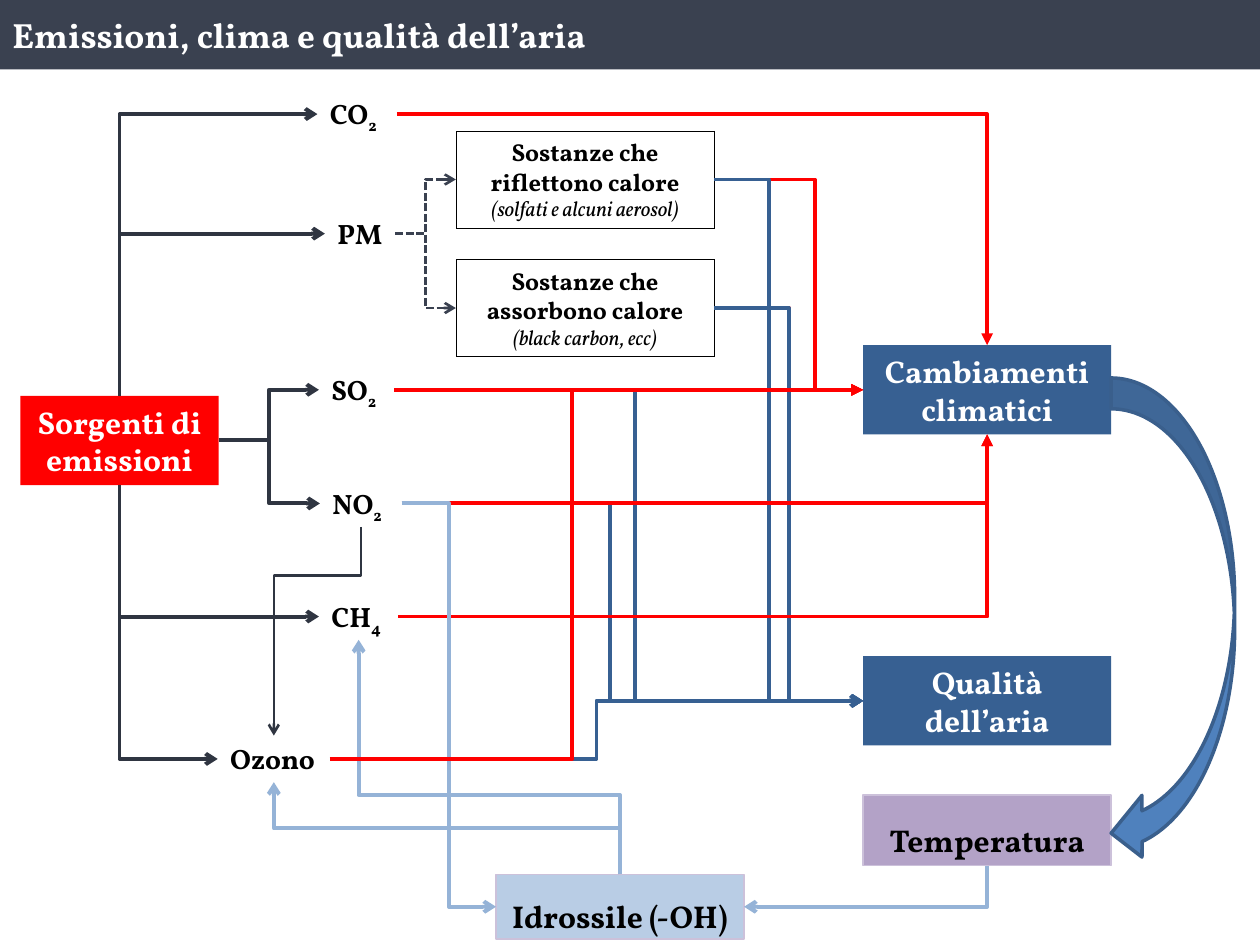
import pptx
import pptx.dml.color
import pptx.enum.dml
import pptx.enum.shapes
import pptx.enum.text
import pptx.oxml
import pptx.oxml.ns
import pptx.util

Cm, Pt = pptx.util.Cm, pptx.util.Pt
RGBColor = pptx.dml.color.RGBColor
SHAPE = pptx.enum.shapes.MSO_SHAPE
LINK = pptx.enum.shapes.MSO_CONNECTOR
DASH = pptx.enum.dml.MSO_LINE
ALIGN = pptx.enum.text.PP_ALIGN
ANCHOR = pptx.enum.text.MSO_ANCHOR
FIT = pptx.enum.text.MSO_AUTO_SIZE

WHITE = RGBColor(0xFF, 0xFF, 0xFF)
BLACK = RGBColor(0x00, 0x00, 0x00)
RED = RGBColor(0xFF, 0x00, 0x00)
BLUE = RGBColor(0x37, 0x60, 0x92)
PALE = RGBColor(0x95, 0xB3, 0xD7)
DARK = RGBColor(0x2F, 0x35, 0x41)
SLATE = RGBColor(0x3A, 0x41, 0x50)
PURPLE = RGBColor(0xB3, 0xA2, 0xC7)
LILAC = RGBColor(0xCC, 0xC1, 0xDA)
SKY = RGBColor(0xB9, 0xCD, 0xE5)
ARROW_FILL = RGBColor(0x4F, 0x81, 0xBD)
ARROW_LINE = RGBColor(0x3A, 0x5F, 0x8C)

FONT = "Vollkorn"
TOP, LEFT, BOTTOM, RIGHT = range(4)

# name: (left, top, width, height in cm), text, fill, line, text colour, line spacing
BOXES = {
    "clima": ((17.4, 6.96, 5, 1.8), "Cambiamenti climatici", BLUE, None, WHITE, None),
    "qualità": ((17.4, 13.23, 5, 1.8), "Qualità dell’aria", BLUE, None, WHITE, None),
    "sorgenti": ((0.41, 7.98, 4, 1.8), "Sorgenti di emissioni", RED, None, WHITE, None),
    "temperatura": ((17.4, 16.03, 5, 1.42), "Temperatura", PURPLE, LILAC, BLACK, 1.5),
    "idrossile": ((10, 17.63, 5, 1.3), "Idrossile (-OH)", SKY, LILAC, BLACK, 1.5),
}
# name: (left, top, width in cm), text, subscript
POLLUTANTS = {
    "co2": ((6.4, 1.83, 1.6), "CO", "2"),
    "pm": ((6.55, 4.24, 1.42), "PM", ""),
    "so2": ((6.43, 7.39, 1.52), "SO", "2"),
    "no2": ((6.45, 9.68, 1.65), "NO", "2"),
    "ch4": ((6.43, 11.96, 1.6), "CH", "4"),
    "ozono": ((4.39, 14.83, 2.26), "Ozono", ""),
}
# name: top in cm, paragraphs of (text, is it the example in italics)
SUBSTANCES = {
    "riflettono": (2.64, [[("Sostanze che riflettono calore", False)],
                          [("(solfati e alcuni aerosol)", True)]]),
    "assorbono": (5.23, [[("Sostanze che assorbono calore ", False),
                          ("(black carbon, ecc)", True)]]),
}

SOURCE = dict(color=DARK, width=2.25, head="arrow")
SPLIT = dict(color=SLATE, width=1.5, head="arrow", dash=DASH.SQUARE_DOT)
CLIMATE = dict(color=RED, width=2.25, head="triangle")
AIR = dict(color=BLUE, width=2.25, head="arrow")
OH = dict(color=PALE, width=2.25, head="arrow")
THIN = dict(color=DARK, width=1.5, head="arrow")

# from, side, to, side, style, place of the middle leg (0 = straight, None = one corner)
FLOWS = [
    ("sorgenti", TOP, "co2", LEFT, SOURCE, None),
    ("sorgenti", TOP, "pm", LEFT, SOURCE, None),
    ("sorgenti", RIGHT, "so2", LEFT, SOURCE, 0.5),
    ("sorgenti", RIGHT, "no2", LEFT, SOURCE, 0.5),
    ("sorgenti", BOTTOM, "ch4", LEFT, SOURCE, None),
    ("sorgenti", BOTTOM, "ozono", LEFT, SOURCE, None),
    ("pm", RIGHT, "riflettono", LEFT, SPLIT, 0.5),
    ("pm", RIGHT, "assorbono", LEFT, SPLIT, 0.5),
    ("co2", RIGHT, "clima", TOP, CLIMATE, None),
    ("riflettono", RIGHT, "clima", LEFT, CLIMATE, 0.675),
    ("assorbono", RIGHT, "clima", LEFT, CLIMATE, 0.5),
    ("riflettono", RIGHT, "qualità", LEFT, AIR, 0.366),
    ("assorbono", RIGHT, "qualità", LEFT, AIR, 0.5),
    ("so2", RIGHT, "qualità", LEFT, AIR, 0.513),
    ("no2", RIGHT, "qualità", LEFT, AIR, 0.452),
    ("so2", RIGHT, "clima", LEFT, CLIMATE, 0),
    ("no2", RIGHT, "clima", BOTTOM, CLIMATE, None),
    ("temperatura", BOTTOM, "idrossile", RIGHT, OH, None),
    ("ch4", RIGHT, "clima", BOTTOM, CLIMATE, None),
    ("ozono", RIGHT, "qualità", LEFT, AIR, 0.5),
    ("no2", RIGHT, "idrossile", LEFT, OH, 0.5),
    ("idrossile", TOP, "ch4", BOTTOM, OH, 0.338),
    ("ozono", RIGHT, "clima", LEFT, CLIMATE, 0.455),
    ("idrossile", TOP, "ozono", BOTTOM, OH, 0.5),
    ("no2", BOTTOM, "ozono", TOP, THIN, 0.233),
]


def add_run(p, text, size, color, bold=True, italic=False):
    r = p.add_run()
    r.text = text
    r.font.color.rgb = color
    for name, value in dict(name=FONT, size=Pt(size), bold=bold, italic=italic).items():
        setattr(r.font, name, value)
    return r


def add_box(place, fill=None, line=None, width=0.75, kind=SHAPE.RECTANGLE):
    sp = shapes.add_shape(kind, *map(Cm, place))
    sp.shadow.inherit = False
    for part, color in ((sp.fill, fill), (sp.line.fill, line)):
        if color is None:
            part.background()
        else:
            part.solid()
            part.fore_color.rgb = color
    if line is not None:
        sp.line.width = Pt(width)
    return sp


def add_flow(start, start_side, end, end_side, style, leg):
    c = shapes.add_connector(LINK.ELBOW if leg != 0 else LINK.STRAIGHT, 0, 0, 0, 0)
    c.begin_connect(nodes[start], start_side)
    c.end_connect(nodes[end], end_side)
    spPr = c._element.spPr
    if start_side in (TOP, BOTTOM):
        turn_upright(c, spPr.xfrm)
    geom = spPr.find(pptx.oxml.ns.qn("a:prstGeom"))
    if leg is None:
        geom.set("prst", "bentConnector2")
    elif leg:
        guide = pptx.oxml.parse_xml(
            f'<a:gd {pptx.oxml.ns.nsdecls("a")} name="adj1" fmla="val {round(leg * 100000)}"/>')
        geom.find(pptx.oxml.ns.qn("a:avLst")).append(guide)
    c.line.color.rgb = style["color"]
    c.line.width = Pt(style["width"])
    if "dash" in style:
        c.line.dash_style = style["dash"]
    for parent, tag, attrs in ((c.line._get_or_add_ln(), "tailEnd", f'type="{style["head"]}"'),
                               (spPr, "effectLst", "")):
        parent.append(pptx.oxml.parse_xml(f'<a:{tag} {pptx.oxml.ns.nsdecls("a")} {attrs}/>'))


def turn_upright(c, xfrm):
    """Rotate an elbow by a quarter turn so that its first leg is vertical."""
    dx, dy = c.end_x - c.begin_x, c.end_y - c.begin_y
    mid_x, mid_y = (c.begin_x + c.end_x) // 2, (c.begin_y + c.end_y) // 2
    c.width, c.height = abs(dy), abs(dx)
    c.left, c.top = mid_x - abs(dy) // 2, mid_y - abs(dx) // 2
    xfrm.flipH = False
    xfrm.flipV = (dx > 0) == (dy > 0)
    xfrm.rot = 90.0 if dy > 0 else 270.0


prs = pptx.Presentation()
prs.slide_width, prs.slide_height = Cm(25.4), Cm(19.05)
shapes = prs.slides.add_slide(prs.slide_layouts[6]).shapes
nodes = {}

for name, (place, text, fill, line, color, spacing) in BOXES.items():
    nodes[name] = sp = add_box(place, fill, line)
    tf = sp.text_frame
    for key, value in dict(word_wrap=True, vertical_anchor=ANCHOR.MIDDLE,
                           auto_size=FIT.SHAPE_TO_FIT_TEXT).items():
        setattr(tf, key, value)
    p = tf.paragraphs[0]
    p.alignment, p.line_spacing = ALIGN.CENTER, spacing
    add_run(p, text, 18, color)

for name, (place, text, subscript) in POLLUTANTS.items():
    nodes[name] = sp = shapes.add_textbox(*map(Cm, (*place, 0.94)))
    tf = sp.text_frame
    tf.word_wrap, tf.auto_size = False, FIT.SHAPE_TO_FIT_TEXT
    p = tf.paragraphs[0]
    add_run(p, text, 16, BLACK)
    if subscript:
        add_run(p, subscript, 16, BLACK).font._element.set("baseline", "-25000")

for name, (top, paragraphs) in SUBSTANCES.items():
    nodes[name] = sp = add_box((9.19, top, 5.21, 1.96), line=BLACK, width=0.25)
    sp.line.dash_style = DASH.ROUND_DOT
    tf = sp.text_frame
    tf.word_wrap, tf.vertical_anchor = True, ANCHOR.TOP
    tf.auto_size = FIT.SHAPE_TO_FIT_TEXT
    for i, runs in enumerate(paragraphs):
        p = tf.add_paragraph() if i else tf.paragraphs[0]
        p.alignment = ALIGN.CENTER
        for text, example in runs:
            add_run(p, text, 12 if example else 14, BLACK, not example, example)

add_box((22.4, 7.62, 2.49, 9.8), ARROW_FILL, ARROW_LINE, 2, SHAPE.CURVED_LEFT_ARROW)

for flow in FLOWS:
    add_flow(*flow)

title = add_box((0, 0, 25.4, 1.4), SLATE)
title.text_frame.vertical_anchor = ANCHOR.MIDDLE
p = title.text_frame.paragraphs[0]
p.alignment = ALIGN.LEFT
add_run(p, "Emissioni, clima e qualità dell’aria", 20, WHITE)

prs.save("out.pptx")
